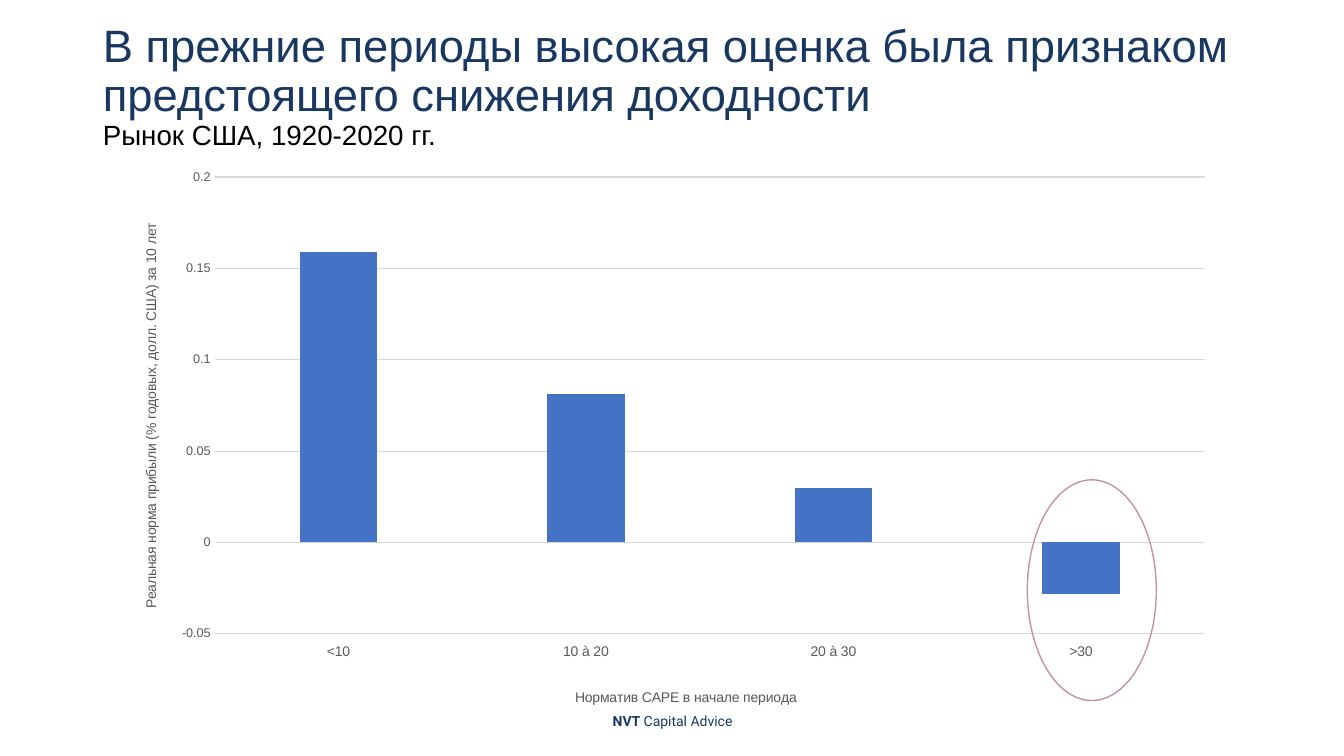
from dataclasses import dataclass

from lxml import etree
from pptx import Presentation
from pptx import util as u
from pptx.chart.data import CategoryChartData
from pptx.dml.color import RGBColor
from pptx.enum import chart as ch, shapes, text
from pptx.oxml import ns

NAVY = RGBColor(0x19, 0x38, 0x61)
BLACK = RGBColor(0, 0, 0)
GREY = RGBColor(0x59, 0x59, 0x59)
RULE = RGBColor(0xD9, 0xD9, 0xD9)
BLUE = RGBColor(0x44, 0x72, 0xC4)
ROSE = RGBColor(0xC4, 0x90, 0xAA)

WIDTH, HEIGHT = u.Inches(13.33), u.Inches(7.5)


@dataclass(frozen=True)
class Box:
    """Left, top, width and height in percent of the slide's size."""
    x: float
    y: float
    w: float
    h: float

    def place(self) -> tuple[int, int, int, int]:
        return (int(WIDTH * self.x / 100), int(HEIGHT * self.y / 100),
                int(WIDTH * self.w / 100), int(HEIGHT * self.h / 100))


@dataclass(frozen=True)
class Run:
    words: str
    size: float
    color: RGBColor
    font: str = "Arial"
    bold: bool = False


TITLE_BOX = Box(6.9, 3.87, 86.27, 15.33)
CHART_BOX = Box(8.7, 21.07, 82.67, 73.33)
FOOTER_BOX = Box(33.16, 92.67, 33.76, 5.33)
RING_BOX = Box(76.44, 63.47, 9.6, 29.2)

RETURNS = {"<10": 0.159, "10 à 20": 0.081, "20 à 30": 0.03, ">30": -0.028}


def style_font(font, size: float, color: RGBColor, name: str = "Arial", bold: bool = False) -> None:
    font.size, font.name, font.bold = u.Pt(size), name, bold
    font.color.rgb = color


def add_run(p, run: Run) -> None:
    r = p.add_run()
    r.text = run.words
    style_font(r.font, run.size, run.color, run.font, run.bold)


def set_layout(parent, index: int, **shares: float) -> None:
    """Fix a chart part's place, in shares of the chart's size."""
    for old in parent.findall(ns.qn("c:layout")):
        parent.remove(old)
    layout = etree.Element(ns.qn("c:layout"))
    manual = etree.SubElement(layout, ns.qn("c:manualLayout"))
    if "w" in shares:
        etree.SubElement(manual, ns.qn("c:layoutTarget"), val="inner")
    for mode in ("xMode", "yMode"):
        etree.SubElement(manual, ns.qn(f"c:{mode}"), val="edge")
    for key, share in shares.items():
        etree.SubElement(manual, ns.qn(f"c:{key}"), val=str(share))
    parent.insert(index, layout)


def style_axis(axis, title: str, size: float, x: float, y: float) -> None:
    axis.major_tick_mark = axis.minor_tick_mark = ch.XL_TICK_MARK.NONE
    style_font(axis.tick_labels.font, size, GREY)
    tf = axis.axis_title.text_frame
    add_run(tf.paragraphs[0], Run(title, 10, GREY))
    set_layout(tf._txBody.getparent().getparent(), 1, x=x, y=y)


def add_title(s) -> None:
    sp = s.shapes.title
    sp.left, sp.top, sp.width, sp.height = TITLE_BOX.place()
    tf = sp.text_frame
    tf.word_wrap = True
    tf.auto_size = text.MSO_AUTO_SIZE.NONE
    tf.vertical_anchor = text.MSO_ANCHOR.MIDDLE
    p = tf.paragraphs[0]
    p.alignment = text.PP_ALIGN.LEFT
    p.line_spacing = 0.9
    p.space_before = u.Pt(0)
    add_run(p, Run("В прежние периоды высокая оценка была признаком "
                   "предстоящего снижения доходности", 32.4, NAVY))
    p.add_line_break()
    add_run(p, Run("Рынок США, 1920-2020 гг.", 19.8, BLACK))


def add_returns_chart(s) -> None:
    data = CategoryChartData()
    data.categories = list(RETURNS)
    data.add_series("Series 1", list(RETURNS.values()))
    chart = s.shapes.add_chart(ch.XL_CHART_TYPE.COLUMN_CLUSTERED, *CHART_BOX.place(), data).chart
    chart.has_title = chart.has_legend = False
    style_font(chart.font, 10, BLACK)

    plot = chart.plots[0]
    plot.vary_by_categories = False
    plot.gap_width, plot.overlap = 219, -27
    series = plot.series[0]
    series.invert_if_negative = False
    series.format.fill.solid()
    series.format.fill.fore_color.rgb = BLUE

    cat, val = chart.category_axis, chart.value_axis
    style_axis(cat, "Норматив CAPE в начале периода", 10, x=0.41, y=0.95)
    cat.tick_label_position = ch.XL_TICK_LABEL_POSITION.LOW
    style_axis(val, "Реальная норма прибыли (% годовых, долл. США) за 10 лет", 9, x=0.02, y=0.11)
    val.minimum_scale, val.maximum_scale, val.major_unit = -0.05, 0.2, 0.05
    val.tick_labels.number_format = "General"
    val.tick_labels.number_format_is_linked = False
    val.format.line.fill.background()
    for line in (cat.format.line, val.major_gridlines.format.line):
        line.color.rgb, line.width = RULE, u.Pt(0.75)
    plot_area = chart._chartSpace.find(f".//{ns.qn('c:plotArea')}")
    set_layout(plot_area, 0, x=0.088, y=0.032, w=0.891, h=0.824)


def add_footer(s) -> None:
    tf = s.shapes.add_textbox(*FOOTER_BOX.place()).text_frame
    tf.word_wrap = True
    tf.vertical_anchor = text.MSO_ANCHOR.MIDDLE
    p = tf.paragraphs[0]
    p.alignment = text.PP_ALIGN.CENTER
    add_run(p, Run("NVT", 10, NAVY, "Roboto", True))
    add_run(p, Run(" Capital Advice", 10, NAVY, "Roboto"))


def add_ring(s) -> None:
    sp = s.shapes.add_shape(shapes.MSO_SHAPE.OVAL, *RING_BOX.place())
    sp.shadow.inherit = False
    sp.fill.background()
    sp.line.color.rgb, sp.line.width = ROSE, u.Pt(1)


def main() -> None:
    prs = Presentation()
    prs.slide_width, prs.slide_height = WIDTH, HEIGHT
    s = prs.slides.add_slide(prs.slide_layouts.get_by_name("Title Only"))
    add_title(s)
    add_footer(s)
    add_returns_chart(s)
    add_ring(s)
    prs.save("out.pptx")


if __name__ == "__main__":
    main()
